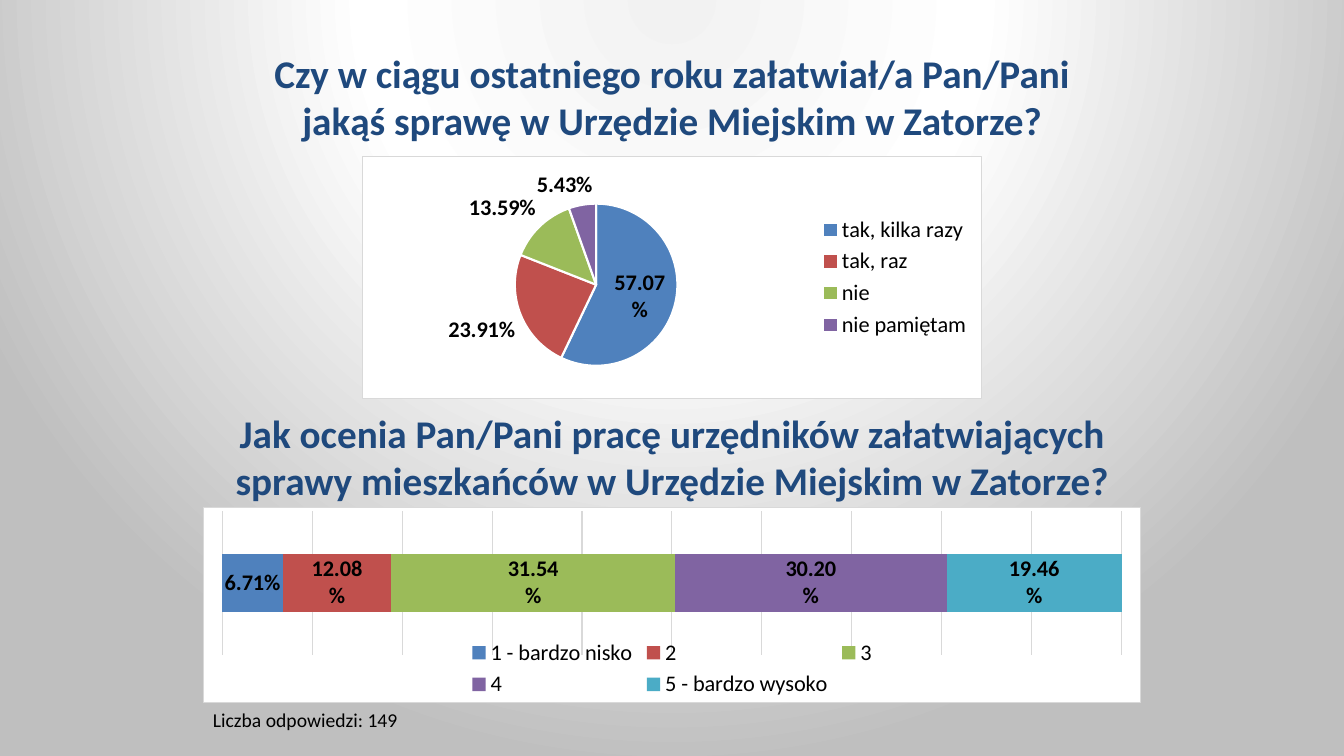
from lxml import etree
from pptx import Presentation
from pptx.chart.data import CategoryChartData as ChartData
from pptx.dml.color import RGBColor
from pptx.enum.chart import XL_CHART_TYPE as Kind, XL_LABEL_POSITION as Spot
from pptx.enum.chart import XL_LEGEND_POSITION as Side
from pptx.enum.text import MSO_AUTO_SIZE as Fit, PP_ALIGN as Align
from pptx.oxml import parse_xml
from pptx.oxml.ns import nsdecls, qn
from pptx.util import Pt

PX = 12192000 / 1344
FONT = "Calibri"
COLORS = ["4F81BD", "C0504D", "9BBB59", "8064A2", "4BACC6"]

deck = Presentation()
deck.slide_width, deck.slide_height = round(1344 * PX), round(756 * PX)
slide = deck.slides.add_slide(deck.slide_layouts[6])


def style(font, size, color, bold=False):
    font.name, font.size, font.bold = FONT, Pt(size), bold
    font.color.rgb = RGBColor.from_string(color)


def add_chart(kind, box, data, side, plot_box):
    """Add a framed chart with a legend, percent labels and a fixed plot area."""
    chart = slide.shapes.add_chart(kind, *[round(n * PX) for n in box], data).chart
    style(chart.font, 16, "000000")
    chart.has_title = False
    chart.has_legend = True
    chart.legend.position = side
    chart.legend.include_in_layout = False
    style(chart.legend.font, 16, "000000")

    plot = chart.plots[0]
    plot.has_data_labels = True
    labels = plot.data_labels
    labels.show_value = True
    labels.number_format, labels.number_format_is_linked = "0.00%", False
    style(labels.font, 16, "000000", True)

    # White frame with a thin grey border
    root = chart.element.find(qn("c:chart"))
    root.addnext(parse_xml(
        f'<c:spPr {nsdecls("c", "a")}><a:solidFill><a:srgbClr val="FFFFFF"/></a:solidFill>'
        '<a:ln w="9525"><a:solidFill><a:srgbClr val="D9D9D9"/></a:solidFill></a:ln></c:spPr>'))

    # Inner plot area, as shares of the frame
    area = root.find(qn("c:plotArea"))
    for old in area.findall(qn("c:layout")):
        area.remove(old)
    layout = parse_xml(f'<c:layout {nsdecls("c")}><c:manualLayout/></c:layout>')
    marks = [("layoutTarget", "inner"), ("xMode", "edge"), ("yMode", "edge")]
    for tag, val in marks + list(zip("xywh", plot_box)):
        etree.SubElement(layout[0], qn(f"c:{tag}")).set("val", str(val))
    area.insert(0, layout)
    return chart


# Background: round gradient from above the slide
slide.background.fill.gradient()
grad = slide.element.find(".//" + qn("a:gradFill"))
for part in list(grad):
    grad.remove(part)
stops = etree.SubElement(grad, qn("a:gsLst"))
for pos, color in [(0, "F2F2F2"), (40, "FFFFFF"), (100, "BFBFBF")]:
    stop = etree.SubElement(stops, qn("a:gs"), pos=str(pos * 1000))
    etree.SubElement(stop, qn("a:srgbClr"), val=color)
round_fill = etree.SubElement(grad, qn("a:path"), path="circle")
etree.SubElement(round_fill, qn("a:fillToRect"), l="50000", t="-80000", r="50000", b="180000")

# Questions and footnote
texts = [
    ((168, 44, 1008, 105), 28, "1F497D", True, Align.CENTER,
     ["Czy w ciągu ostatniego roku załatwiał/a Pan/Pani",
      "jakąś sprawę w Urzędzie Miejskim w Zatorze?"]),
    ((168, 404, 1008, 105), 28, "1F497D", True, Align.CENTER,
     ["Jak ocenia Pan/Pani pracę urzędników załatwiających "
      "sprawy mieszkańców w Urzędzie Miejskim w Zatorze?"]),
    ((203, 703, 214, 34), 14, "000000", False, Align.LEFT, ["Liczba odpowiedzi: 149"]),
]
for box, size, color, bold, align, lines in texts:
    frame = slide.shapes.add_textbox(*[round(n * PX) for n in box]).text_frame
    frame.word_wrap = True
    frame.auto_size = Fit.SHAPE_TO_FIT_TEXT
    for i, line in enumerate(lines):
        para = frame.add_paragraph() if i else frame.paragraphs[0]
        para.alignment = align
        run = para.add_run()
        run.text = line
        style(run.font, size, color, bold)

# Pie: visits to the office
data = ChartData(number_format="0.00%")
data.categories = ["tak, kilka razy", "tak, raz", "nie", "nie pamiętam"]
data.add_series("Series 1", [0.5707, 0.2391, 0.1359, 0.0543])
pie = add_chart(Kind.PIE, (362, 156, 620, 243), data, Side.RIGHT, (0.245, 0.195, 0.265, 0.67))
pie.plots[0].data_labels.position = Spot.BEST_FIT
for i, color in enumerate(COLORS[:4]):
    form = pie.plots[0].series[0].points[i].format
    form.fill.solid()
    form.fill.fore_color.rgb = RGBColor.from_string(color)
    form.line.color.rgb = RGBColor.from_string("FFFFFF")
    form.line.width = Pt(1.5)

# Stacked bar: rating of the clerks
data = ChartData(number_format="0.00%")
data.categories = ["1"]
names = ["1 - bardzo nisko", "2", "3", "4", "5 - bardzo wysoko"]
for name, share in zip(names, [0.0671, 0.1208, 0.3154, 0.302, 0.1946]):
    data.add_series(name, [share])
bar = add_chart(Kind.BAR_STACKED, (203, 507, 938, 196), data, Side.BOTTOM,
                (0.02, 0.02, 0.96, 0.735))
bar.plots[0].gap_width, bar.plots[0].overlap = 150, 100
for series, color in zip(bar.plots[0].series, COLORS):
    series.format.fill.solid()
    series.format.fill.fore_color.rgb = RGBColor.from_string(color)
bar.category_axis.visible = False
axis = bar.value_axis
axis.visible = False
axis.minimum_scale, axis.maximum_scale, axis.major_unit = 0, 1, 0.1
axis.has_major_gridlines = True
grid = axis.major_gridlines.format.line
grid.color.rgb = RGBColor.from_string("D9D9D9")
grid.width = Pt(0.75)

deck.save("out.pptx")
